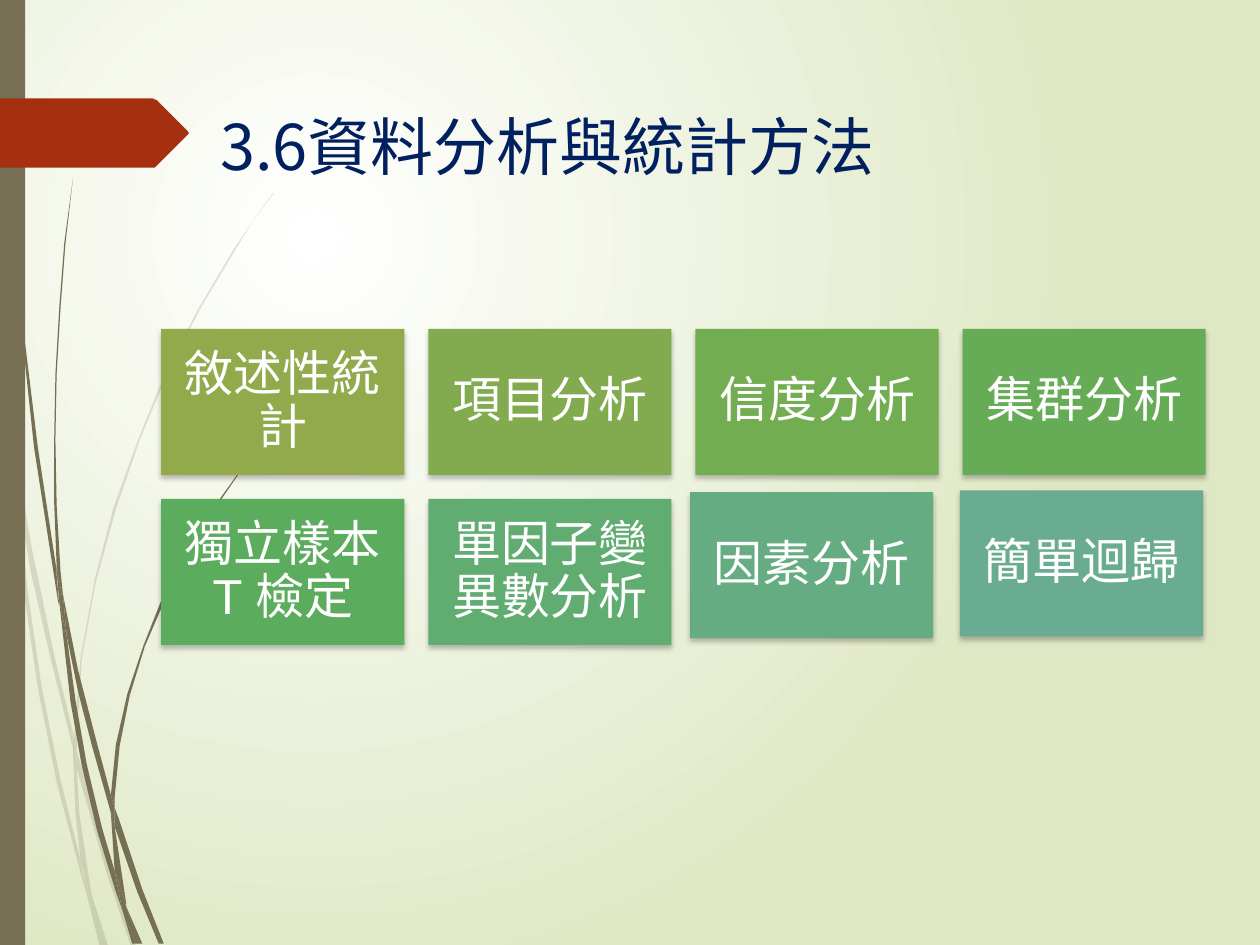
from pptx import Presentation
from pptx.dml.color import RGBColor as RGB
from pptx.enum.shapes import MSO_SHAPE as Kind
from pptx.enum.text import MSO_ANCHOR as Anchor, PP_ALIGN as Align
from pptx.oxml.ns import qn
from pptx.util import Inches, Pt
from lxml.etree import SubElement as Sub

WIDE, HIGH = Inches(10), Inches(7.5)
UNIT = Inches(0.01)  # outlines are given in hundredths of an inch

HUES = {
    "pale": "FFFFFF", "lime": "DFE8C4", "stem": "766F54", "flag": "A53010",
    "title": "002060", "text": "FFFFFF", "shade": "000000",
}

# Card grid: origin, step and size in inches
LEFT, TOP, STEP_X, STEP_Y = 1.28, 2.61, 2.12, 1.35
CARD_W, CARD_H = 1.93, 1.16

# Label, fill, column, row; two cards sit slightly off the grid
CARDS = [
    ("敘述性統計", "92AA4C", 0, 0),
    ("項目分析", "82AB4F", 1, 0),
    ("信度分析", "73AD52", 2, 0),
    ("集群分析", "66AC57", 3, 0),
    ("獨立樣本 T 檢定", "5CAC5E", 0, 1),
    ("單因子變異數分析", "61AC71", 1, 1),
    ("因素分析", "65AC82", 1.98, 0.96),
    ("簡單迴歸", "6AAC91", 2.99, 0.95),
]

# Grass outlines as x, y pairs
FAINT = [
    (8, 350, 6, 322, 0, 282, 0, 299, 7, 344),
    (40, 522, 59, 599, 59, 586, 43, 520, 25, 434, 10, 345, 12, 376, 24, 452),
    (64, 607, 61, 596, 61, 610, 85, 694, 104, 751, 108, 751, 88, 692),
    (83, 751, 86, 751, 73, 711),
    (64, 683, 48, 619, 33, 545, 22, 469, 12, 376, 8, 350, 19, 470, 30, 546,
     45, 621, 64, 693, 70, 714, 69, 707),
    (58, 599, 60, 646, 64, 683, 67, 692, 73, 711, 72, 706, 63, 646, 61, 610,
     61, 608),
    (61, 584, 65, 522, 76, 462, 92, 404, 111, 349, 133, 296, 159, 245,
     187, 198, 201, 175, 217, 154, 217, 153, 201, 175, 186, 197, 158, 244,
     132, 294, 110, 348, 90, 403, 75, 461, 64, 522, 59, 584, 59, 586,
     61, 596),
    (70, 714, 79, 751, 82, 751),
    (61, 608, 61, 610, 61, 596, 59, 586, 58, 599),
    (67, 692, 65, 683, 69, 707, 70, 714, 82, 751, 83, 751, 73, 711),
]
SOLID = [
    (5, 110, 14, 233, 27, 355, 46, 477, 47, 481, 45, 457, 45, 453, 30, 355,
     15, 232, 6, 109, 4, 48, 3, 0, 2, 0, 3, 48),
    (73, 592, 88, 645, 88, 633, 88, 631, 77, 590, 62, 532, 50, 472, 53, 505,
     62, 549),
    (94, 649, 91, 641, 91, 656, 109, 708, 126, 749, 130, 749, 113, 706),
    (91, 691, 81, 657, 69, 607, 60, 556, 53, 505, 47, 477, 56, 557, 65, 608,
     77, 659, 92, 708, 97, 722, 96, 717),
    (50, 472, 48, 453, 45, 401, 44, 349, 45, 297, 48, 245, 52, 193, 58, 141,
     51, 193, 47, 245, 44, 297, 43, 349, 43, 399, 45, 449, 49, 472),
    (110, 749, 113, 749, 100, 719),
    (47, 477, 53, 505, 50, 472, 49, 472, 45, 449, 45, 453),
    (91, 633, 95, 592, 103, 552, 115, 513, 131, 476, 149, 440, 169, 406,
     191, 374, 203, 359, 216, 344, 215, 344, 203, 358, 191, 373, 168, 405,
     147, 439, 129, 474, 114, 512, 101, 551, 92, 591, 88, 631, 91, 641),
    (97, 722, 105, 749, 108, 749),
    (88, 645, 91, 691, 96, 706, 100, 719, 100, 716, 91, 656, 90, 651),
    (88, 645, 90, 651, 91, 656, 91, 641, 88, 631, 88, 633),
    (96, 706, 91, 691, 96, 717, 97, 722, 108, 749, 110, 749, 100, 719),
]
FLAG = (149, 107, 124, 132, 123, 133, 121, 133, 0, 133, 0, 78, 121, 78,
        123, 79, 124, 79, 149, 104, 149.5, 105.5)


def put(item, **form):
    """Set each given value on the item."""
    for name, value in form.items():
        setattr(item, name, value)


def hue(name):
    return RGB.from_string(HUES.get(name, name))


def paint(shape, name):
    """Flat fill, no line, no shadow."""
    shape.fill.solid()
    shape.fill.fore_color.rgb = hue(name)
    shape.line.fill.background()
    shape.shadow.inherit = False


def clear(shape, share):
    """Make the fill opaque only by the given percentage."""
    tint = shape.element.spPr.find(".//" + qn("a:srgbClr"))
    Sub(tint, qn("a:alpha"), val=str(share * 1000))


def shade(shape):
    """Soft shadow straight below the shape."""
    list_ = shape.element.spPr.find(qn("a:effectLst"))
    cast = Sub(list_, qn("a:outerShdw"), blurRad=str(Pt(3)),
               dist=str(Pt(2)), dir="5400000", rotWithShape="0")
    tint = Sub(cast, qn("a:srgbClr"), val=HUES["shade"])
    Sub(tint, qn("a:alpha"), val="25000")


def write(shape, text, frame, para, font, tone):
    """Put one formatted line of text into a shape."""
    body = shape.text_frame
    put(body, word_wrap=True, **frame)
    line = body.paragraphs[0]
    put(line, **para)
    run = line.add_run()
    run.text = text
    put(run.font, **font)
    run.font.color.rgb = hue(tone)
    return run


def glow(slide):
    """Round gradient behind everything."""
    fill = slide.background.fill
    fill.gradient()
    for stop, name in zip(fill.gradient_stops, ("pale", "lime")):
        stop.color.rgb = hue(name)
    grad = slide.element.find(".//" + qn("a:gradFill"))
    grad.remove(grad.find(qn("a:lin")))
    ring = Sub(grad, qn("a:path"), path="circle")
    Sub(ring, qn("a:fillToRect"), l="50000", t="50000", r="100000", b="100000")


def blade(slide, flat, name):
    """Closed outline from a flat run of x, y values."""
    dots = list(zip(flat[::2], flat[1::2]))
    pen = slide.shapes.build_freeform(*dots[0], scale=UNIT)
    pen.add_line_segments(dots[1:], close=True)
    shape = pen.convert_to_shape()
    paint(shape, name)
    return shape


def card(slide, text, fill, col, row):
    place = (LEFT + col * STEP_X, TOP + row * STEP_Y, CARD_W, CARD_H)
    shape = slide.shapes.add_shape(Kind.RECTANGLE, *map(Inches, place))
    paint(shape, fill)
    shade(shape)
    pad = Inches(0.12)
    frame = dict(vertical_anchor=Anchor.MIDDLE, margin_left=pad,
                 margin_right=pad, margin_top=pad, margin_bottom=pad)
    write(shape, text, frame, dict(alignment=Align.CENTER, line_spacing=0.9),
          dict(name="Arial", size=Pt(28)), "text")


def head(slide, text):
    box = slide.shapes.add_textbox(int(WIDE * 0.165), int(HIGH * 0.1),
                                   int(WIDE * 0.78), int(HIGH * 0.1))
    face = "Noto Sans CJK SC"
    run = write(box, text, dict(vertical_anchor=Anchor.BOTTOM), {},
                dict(name=face, size=Pt(36)), "title")
    Sub(run.font._element, qn("a:ea"), typeface=face)


def main():
    deck = Presentation()
    put(deck, slide_width=WIDE, slide_height=HIGH)
    slide = deck.slides.add_slide(deck.slide_layouts[6])
    glow(slide)

    # Grass, side bar and flag
    for flat in FAINT:
        clear(blade(slide, flat, "stem"), 20)
    for flat in SOLID:
        blade(slide, flat, "stem")
    bar = slide.shapes.add_shape(Kind.RECTANGLE, 0, 0, int(WIDE * 0.02), HIGH)
    paint(bar, "stem")
    blade(slide, FLAG, "flag")

    # Title and cards
    head(slide, "3.6資料分析與統計方法")
    for item in CARDS:
        card(slide, *item)
    deck.save("out.pptx")


if __name__ == "__main__":
    main()
